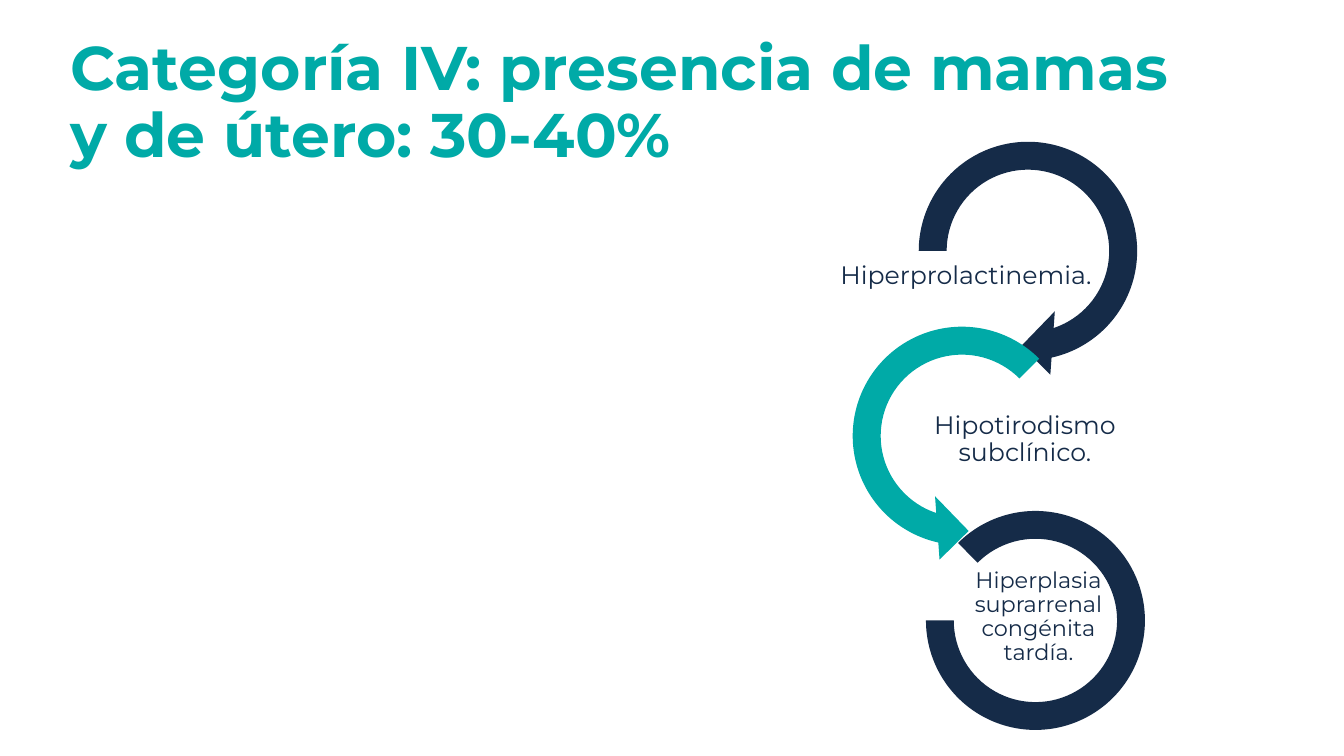
from pptx import Presentation
from pptx.dml.color import RGBColor
from pptx.enum.shapes import MSO_SHAPE
from pptx.enum.text import MSO_ANCHOR, MSO_AUTO_SIZE, PP_ALIGN
from pptx.util import Pt

EMU_PER_PX = 914400 / 100.8
TITLE_ONLY = 5
MIDDLE = MSO_ANCHOR.MIDDLE
NO_AUTOFIT = MSO_AUTO_SIZE.NONE
LEFT, CENTER = PP_ALIGN.LEFT, PP_ALIGN.CENTER
RIGHT_ARROW = MSO_SHAPE.CIRCULAR_ARROW
LEFT_ARROW = MSO_SHAPE.LEFT_CIRCULAR_ARROW
ARC = MSO_SHAPE.BLOCK_ARC
COLORS = {"navy": "152B48", "teal": "00AAA7"}


def px(length):
    return round(length * EMU_PER_PX)


class CauseSlide:
    font = "Montserrat"

    def __init__(self, deck):
        self.slide = deck.slides.add_slide(deck.slide_layouts[TITLE_ONLY])

    def set_text(self, frame, text, size, color, align, bold=False):
        frame.text = text
        frame.word_wrap = True
        frame.auto_size = NO_AUTOFIT
        frame.vertical_anchor = MIDDLE
        paragraph = frame.paragraphs[0]
        paragraph.alignment = align
        paragraph.line_spacing = 0.9
        font = paragraph.runs[0].font
        font.name, font.size, font.bold = self.font, Pt(size), bold
        font.color.rgb = RGBColor.from_string(COLORS[color])

    def title(self, text, left, top, width, height):
        heading = self.slide.shapes.title
        heading.left, heading.top = px(left), px(top)
        heading.width, heading.height = px(width), px(height)
        self.set_text(heading.text_frame, text, 44, "teal", LEFT, bold=True)

    def ring(self, kind, left, top, side, adjustments, color):
        ring = self.slide.shapes.add_shape(kind, px(left), px(top), px(side), px(side))
        for index, value in enumerate(adjustments):
            ring.adjustments[index] = value
        ring.shadow.inherit = False
        ring.fill.solid()
        ring.fill.fore_color.rgb = RGBColor.from_string(COLORS[color])
        ring.line.fill.background()

    def label(self, text, left, top, width, height, size):
        box = self.slide.shapes.add_textbox(px(left), px(top), px(width), px(height))
        frame = box.text_frame
        frame.margin_left = frame.margin_right = px(1)
        frame.margin_top = frame.margin_bottom = px(1)
        self.set_text(frame, text, size, "navy", CENTER)


def main():
    deck = Presentation()
    deck.slide_width, deck.slide_height = px(1344), px(756)

    causes = CauseSlide(deck)
    causes.title("Categoría IV: presencia de mamas y de útero: 30-40%", 60, 31, 1159, 146)

    causes.ring(RIGHT_ARROW, 901, 124, 254, (0.11, 11.42, 45, 108, 0.125), "navy")
    causes.label("Hiperprolactinemia.", 820, 241, 292, 71, 18)

    causes.ring(LEFT_ARROW, 835, 309, 254, (0.11, 11.42, 63, 189, 0.125), "teal")
    causes.label("Hipotirodismo subclínico.", 879, 404, 292, 71, 18)

    causes.ring(ARC, 926, 511, 219, (135, 108, 0.127), "navy")
    causes.label("Hiperplasia suprarrenal congénita tardía.", 968, 543, 141, 148, 16)

    deck.save("out.pptx")


if __name__ == "__main__":
    main()
